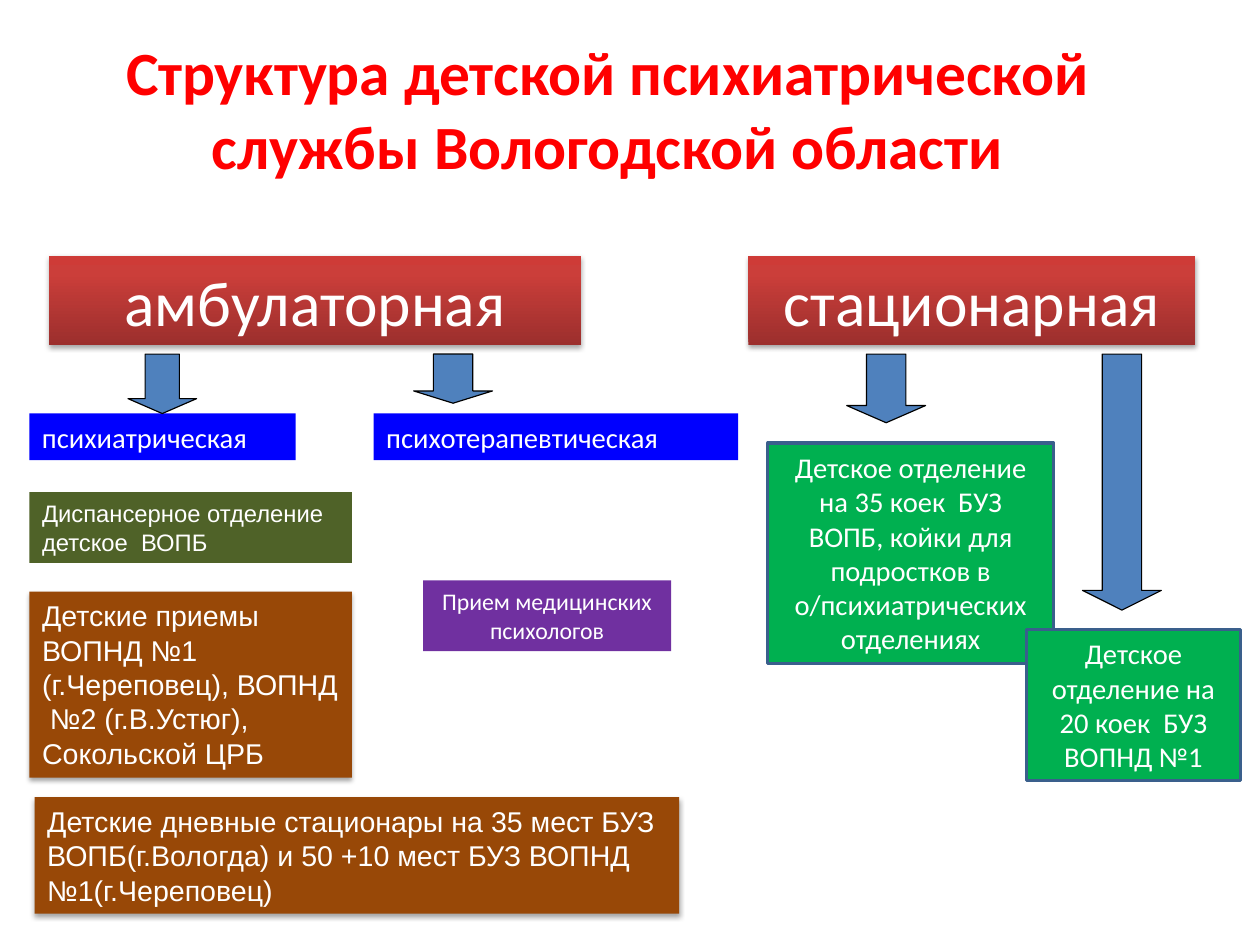
from copy import deepcopy
from dataclasses import dataclass

from lxml import etree
from pptx import Presentation
from pptx import util as u
from pptx.dml.color import RGBColor
from pptx.enum import shapes, text
from pptx.oxml import ns

WIDTH, HEIGHT = u.Cm(28), u.Cm(21)
COLORS = {
    "title": "FF0000", "text": "FFFFFF", "service": "0000FF",
    "dispensary": "4F6228", "visits": "984807", "ward": "00B050",
    "ward_line": "3A5F8C", "psychologists": "7030A0",
    "arrow": "4F81BD", "arrow_line": "000000", "shadow": "000000",
    "red_dark": "9C2F2D", "red": "CB3E3A", "red_edge": "CE3B37",
}
BRANCH_STOPS = [(0, "red_dark"), (0.8, "red"), (1, "red_edge")]
CENTER, LEFT = text.PP_ALIGN.CENTER, text.PP_ALIGN.LEFT


@dataclass
class Area:
    """Position and size in percent of the slide's width and height."""
    left: float
    top: float
    width: float
    height: float

    def lengths(self) -> list[int]:
        shares = (self.left, self.top, self.width, self.height)
        return [int(side * share / 100)
                for side, share in zip((WIDTH, HEIGHT) * 2, shares)]


@dataclass
class Box:
    words: str
    area: Area
    fill: str  # a key of COLORS, or "branch" for the red gradient
    size: float = 18
    font: str = "Calibri"
    align: text.PP_ALIGN = CENTER
    line: str = ""
    shadow: bool = False


# Rows shared by several parts
BRANCH_TOP, BRANCH_HEIGHT = 27.07, 9.43
ARROW_TOP = 37.47
SERVICE_TOP, SERVICE_HEIGHT = 43.74, 4.96
EDGE, UNIT_WIDTH, SMALL_HEIGHT = 2.34, 25.59, 7.5

BOXES = [
    # Branches
    Box("амбулаторная", Area(3.9, BRANCH_TOP, 42.2, BRANCH_HEIGHT),
        "branch", 40, shadow=True),
    Box("стационарная", Area(59.39, BRANCH_TOP, 35.48, BRANCH_HEIGHT),
        "branch", 40, shadow=True),
    # Outpatient services
    Box("психиатрическая", Area(EDGE, SERVICE_TOP, 21.12, SERVICE_HEIGHT),
        "service", align=LEFT),
    Box("психотерапевтическая", Area(29.66, SERVICE_TOP, 28.93, SERVICE_HEIGHT),
        "service", align=LEFT),
    # Outpatient units
    Box("Диспансерное отделение детское  ВОПБ",
        Area(EDGE, 52.08, UNIT_WIDTH, SMALL_HEIGHT), "dispensary", 15, "Arial", LEFT),
    Box("Детские приемы ВОПНД №1 (г.Череповец), ВОПНД  №2 (г.В.Устюг), Сокольской ЦРБ",
        Area(EDGE, 62.6, UNIT_WIDTH, 19.7), "visits", 18, "Arial", LEFT, shadow=True),
    Box("Детские дневные стационары на 35 мест БУЗ ВОПБ(г.Вологда) "
        "и 50 +10 мест БУЗ ВОПНД №1(г.Череповец)",
        Area(2.75, 84.36, 51.16, 12.33), "visits", 18, "Arial", LEFT, shadow=True),
    Box("Прием медицинских психологов",
        Area(33.57, 61.41, 19.69, SMALL_HEIGHT), "psychologists", 15),
    # Inpatient wards
    Box("Детское отделение на 35 коек  БУЗ ВОПБ, койки для подростков "
        "в о/психиатрических отделениях",
        Area(60.93, 46.88, 22.69, 23.34), "ward", line="ward_line"),
    Box("Детское отделение на 20 коек  БУЗ ВОПНД №1",
        Area(81.47, 66.61, 16.97, 15.96), "ward", line="ward_line"),
]

ARROWS = [
    Area(10.16, ARROW_TOP, 5.44, 6.29),
    Area(32.83, ARROW_TOP, 6.26, 5.2),
    Area(67.2, ARROW_TOP, 6.26, 7.26),
    Area(85.91, ARROW_TOP, 6.26, 27.09),
]


def color(key: str) -> RGBColor:
    return RGBColor.from_string(COLORS[key])


def write(frame, words: str, size: float, font: str, tone: str,
          align: text.PP_ALIGN, bold: bool = False) -> None:
    frame.word_wrap = True
    frame.auto_size = text.MSO_AUTO_SIZE.NONE
    frame.margin_left = frame.margin_right = u.Inches(0.11)
    frame.margin_top = frame.margin_bottom = u.Inches(0.06)
    frame.text = words
    paragraph = frame.paragraphs[0]
    paragraph.alignment = align
    paragraph.font.size = u.Pt(size)
    paragraph.font.name = font
    paragraph.font.bold = bold
    paragraph.font.color.rgb = color(tone)


def fill_branch(shape) -> None:
    shape.fill.gradient()
    shape.fill.gradient_angle = 90
    stop_list = shape.element.spPr.find(".//" + ns.qn("a:gsLst"))
    stop_list.append(deepcopy(stop_list[0]))
    for stop, (position, tone) in zip(shape.fill.gradient_stops, BRANCH_STOPS):
        stop.position = position
        stop.color.rgb = color(tone)


def add_shadow(shape) -> None:
    effects = shape.element.spPr.find(ns.qn("a:effectLst"))
    outer = etree.SubElement(effects, ns.qn("a:outerShdw"), blurRad=str(u.Pt(3.1)),
                             dist=str(u.Pt(1.8)), dir="5400000", rotWithShape="0")
    tone = etree.SubElement(outer, ns.qn("a:srgbClr"), val=COLORS["shadow"])
    etree.SubElement(tone, ns.qn("a:alpha"), val="35000")


def add_figure(slide, kind: shapes.MSO_SHAPE, area: Area, fill: str,
               line: str, line_width: float):
    shape = slide.shapes.add_shape(kind, *area.lengths())
    shape.shadow.inherit = False
    if fill == "branch":
        fill_branch(shape)
    else:
        shape.fill.solid()
        shape.fill.fore_color.rgb = color(fill)
    if line:
        shape.line.color.rgb = color(line)
        shape.line.width = u.Pt(line_width)
    else:
        shape.line.fill.background()
    return shape


def add_box(slide, box: Box) -> None:
    shape = add_figure(slide, shapes.MSO_SHAPE.RECTANGLE, box.area, box.fill, box.line, 2)
    if box.shadow:
        add_shadow(shape)
    shape.text_frame.vertical_anchor = text.MSO_ANCHOR.TOP
    write(shape.text_frame, box.words, box.size, box.font, "text", box.align)


def main() -> None:
    deck = Presentation()
    deck.slide_width, deck.slide_height = WIDTH, HEIGHT
    slide = deck.slides.add_slide(deck.slide_layouts[5])

    # Title
    title = slide.shapes.title
    title.left, title.top, title.width, title.height = Area(5.43, 3.1, 85.54, 16.69).lengths()
    title.text_frame.vertical_anchor = text.MSO_ANCHOR.MIDDLE
    write(title.text_frame, "Структура детской психиатрической службы Вологодской области",
          38.7, "Calibri", "title", CENTER, bold=True)

    # Structure
    for box in BOXES:
        add_box(slide, box)
    for area in ARROWS:
        arrow = add_figure(slide, shapes.MSO_SHAPE.DOWN_ARROW, area, "arrow", "arrow_line", 0.75)
        arrow.adjustments[0], arrow.adjustments[1] = 0.5, 0.25

    deck.save("out.pptx")


if __name__ == "__main__":
    main()
